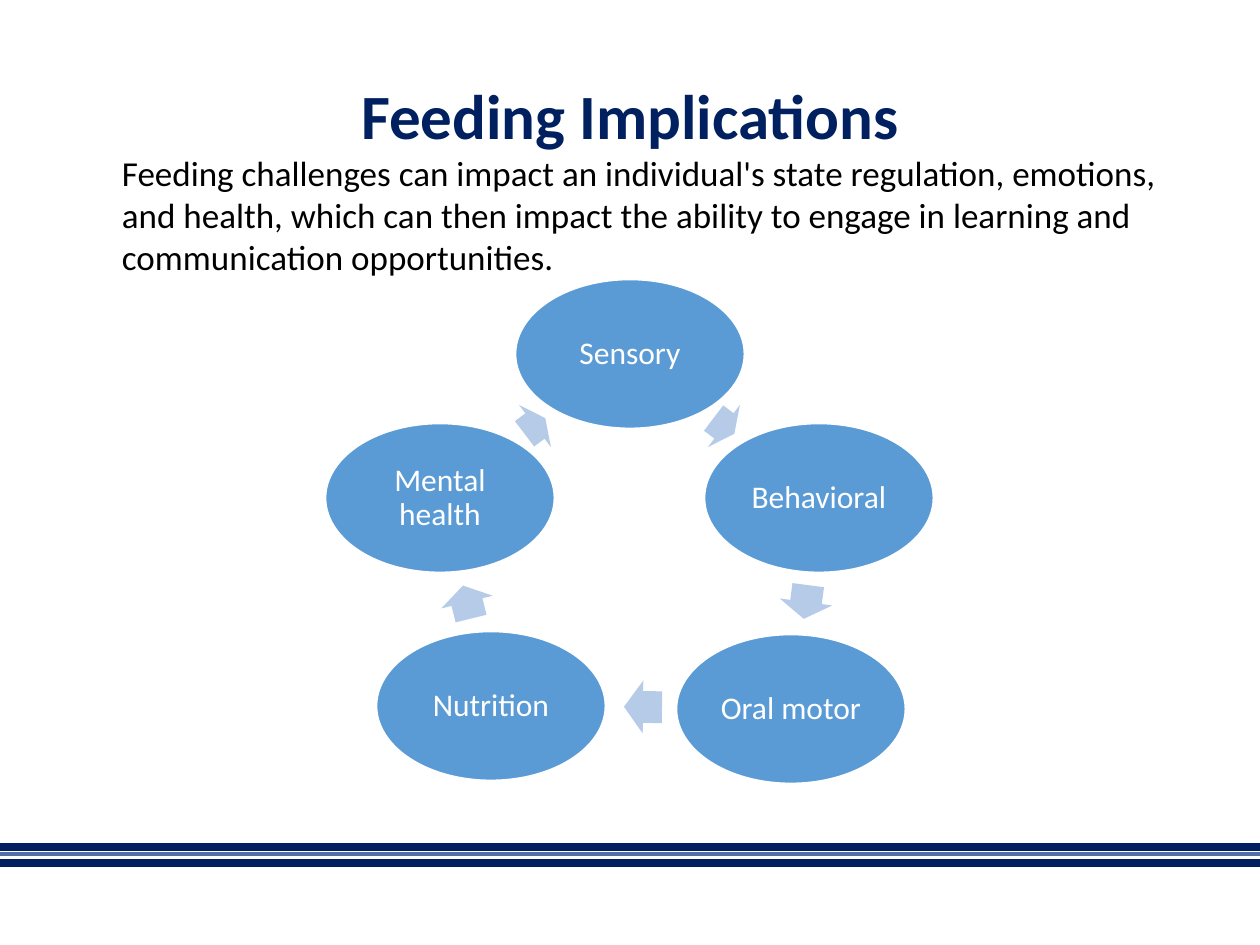
from typing import NamedTuple

from lxml import etree
from pptx import Presentation
from pptx import util as u
from pptx.dml.color import RGBColor
from pptx.enum import shapes, text
from pptx.oxml.ns import qn

PX = u.Inches(1) / 126
FONT = "Calibri"
NAVY, STRIPE_BLUE = "001F5F", "5070A7"
OVAL_WIDTH, OVAL_HEIGHT = 229, 149
ARROW_HEIGHT = 53


class Stripe(NamedTuple):
    y: int
    weight: float
    color: str


class Topic(NamedTuple):
    label: str
    center_x: int
    center_y: int


class Arrow(NamedTuple):
    center_x: int
    center_y: int
    length: int
    angle: float


STRIPES = [
    Stripe(847, 4.5, NAVY),
    Stripe(854, 2.25, STRIPE_BLUE),
    Stripe(863, 4.5, NAVY),
]
TOPICS = [
    Topic("Sensory", 630, 354),
    Topic("Behavioral", 819, 498),
    Topic("Oral motor", 791, 709),
    Topic("Nutrition", 491, 706),
    Topic("Mental health", 440, 498),
]
ARROWS = [
    Arrow(724, 426, 26, 37.1),
    Arrow(806, 602, 34, 97.5),
    Arrow(643, 707, 38, 180.6),
    Arrow(467, 602, 34, 256.1),
    Arrow(535, 426, 26, 322.9),
]


def px(length: float) -> u.Emu:
    return u.Emu(round(length * PX))


def rgb(color: str) -> RGBColor:
    return RGBColor.from_string(color)


def write_text(shape, wording: str, *, size: int, color: str, bold: bool = False,
               align=text.PP_ALIGN.LEFT, anchor=text.MSO_ANCHOR.MIDDLE,
               line_spacing: float = 1.0, inset_x: int = 9, inset_y: int = 5) -> None:
    frame = shape.text_frame
    frame.word_wrap = True
    frame.auto_size = text.MSO_AUTO_SIZE.NONE
    frame.vertical_anchor = anchor
    frame.margin_left = frame.margin_right = px(inset_x)
    frame.margin_top = frame.margin_bottom = px(inset_y)
    paragraph = frame.paragraphs[0]
    paragraph.alignment = align
    paragraph.line_spacing = line_spacing
    run = paragraph.add_run()
    run.text = wording
    run.font.name = FONT
    run.font.size = u.Pt(size)
    run.font.bold = bold
    run.font.color.rgb = rgb(color)


def add_centered(slide, kind, center_x: int, center_y: int, width: int, height: int,
                 fill: str):
    """Add a filled preset shape placed by its centre."""
    shape = slide.shapes.add_shape(kind, px(center_x - width / 2), px(center_y - height / 2),
                                   px(width), px(height))
    shape.shadow.inherit = False
    shape.fill.solid()
    shape.fill.fore_color.rgb = rgb(fill)
    return shape


def add_stripe(slide, stripe: Stripe) -> None:
    line = slide.shapes.add_connector(shapes.MSO_CONNECTOR.STRAIGHT,
                                      0, px(stripe.y), px(1260), px(stripe.y))
    line.line.width = u.Pt(stripe.weight)
    line.line.color.rgb = rgb(stripe.color)
    etree.SubElement(line._element.spPr, qn("a:effectLst"))


def add_topic(slide, topic: Topic) -> None:
    oval = add_centered(slide, shapes.MSO_SHAPE.OVAL, topic.center_x, topic.center_y,
                        OVAL_WIDTH, OVAL_HEIGHT, "5B9BD5")
    oval.line.color.rgb = rgb("FFFFFF")
    oval.line.width = u.Pt(1)
    write_text(oval, topic.label, size=18, color="FFFFFF", align=text.PP_ALIGN.CENTER,
               line_spacing=0.9, inset_x=4, inset_y=4)


def add_arrow(slide, arrow: Arrow) -> None:
    shape = add_centered(slide, shapes.MSO_SHAPE.RIGHT_ARROW, arrow.center_x, arrow.center_y,
                         arrow.length, ARROW_HEIGHT, "B5CBE7")
    shape.line.fill.background()
    shape.adjustments[0] = 0.6
    shape.adjustments[1] = 0.5
    shape.rotation = arrow.angle


def main() -> None:
    deck = Presentation()
    deck.slide_width, deck.slide_height = px(1260), px(945)
    slide = deck.slides.add_slide(deck.slide_layouts[5])

    for stripe in STRIPES:
        add_stripe(slide, stripe)

    title = slide.shapes.title
    title.left, title.top, title.width, title.height = px(87), px(53), px(1086), px(132)
    write_text(title, "Feeding Implications", size=36, color="002060", bold=True,
               align=text.PP_ALIGN.CENTER, line_spacing=0.9)

    for topic, arrow in zip(TOPICS, ARROWS):
        add_topic(slide, topic)
        add_arrow(slide, arrow)

    summary = slide.shapes.add_textbox(px(113), px(147), px(1060), px(137))
    write_text(summary,
               "Feeding challenges can impact an individual's state regulation, emotions, "
               "and health, which can then impact the ability to engage in learning and "
               "communication opportunities.",
               size=20, color="000000", anchor=text.MSO_ANCHOR.TOP)

    deck.save("out.pptx")


if __name__ == "__main__":
    main()
